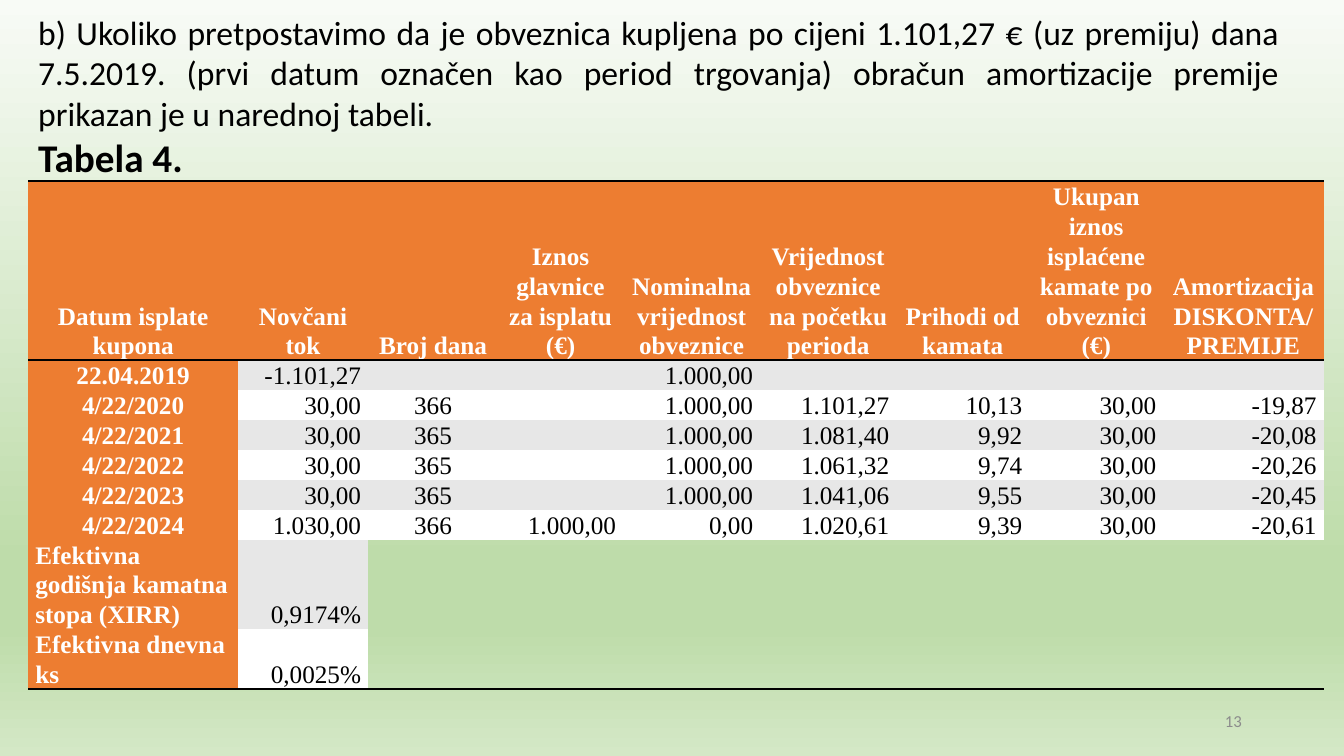
"""Builds the slide on amortising a bond premium."""
from lxml import etree
from pptx import Presentation
from pptx.dml.color import RGBColor
from pptx.enum import text as t
from pptx.oxml import ns
from pptx.util import Pt

ORANGE, GREY, WHITE, BLACK = "ED7D31", "E7E7E7", "FFFFFF", "000000"
SERIF = "Times New Roman"
LEFT, CENTER, RIGHT, JUSTIFY = (
    t.PP_ALIGN.LEFT, t.PP_ALIGN.CENTER, t.PP_ALIGN.RIGHT, t.PP_ALIGN.JUSTIFY)
NO_STYLE_NO_GRID = "{2D5ABB26-0587-4C30-8999-92F81FD0307C}"

BACKGROUND = [(0, "F8FBF6"), (74, "BEDCAA"), (83, "BEDCAA"), (100, "D4E8C6")]
INTRO = ("b) Ukoliko pretpostavimo da je obveznica kupljena po cijeni 1.101,27 € "
         "(uz premiju) dana 7.5.2019. (prvi datum označen kao period trgovanja) "
         "obračun amortizacije premije prikazan je u narednoj tabeli.")
HEADINGS = ["Datum isplate kupona", "Novčani tok", "Broj dana",
            "Iznos glavnice za isplatu (€)", "Nominalna vrijednost obveznice",
            "Vrijednost obveznice na početku perioda", "Prihodi od kamata",
            "Ukupan iznos isplaćene kamate po obveznici (€)",
            "Amortizacija DISKONTA/ PREMIJE"]
PAYMENTS = [
    ["22.04.2019", "-1.101,27", "", "", "1.000,00", "", "", "", ""],
    ["4/22/2020", "30,00", "366", "", "1.000,00", "1.101,27", "10,13", "30,00", "-19,87"],
    ["4/22/2021", "30,00", "365", "", "1.000,00", "1.081,40", "9,92", "30,00", "-20,08"],
    ["4/22/2022", "30,00", "365", "", "1.000,00", "1.061,32", "9,74", "30,00", "-20,26"],
    ["4/22/2023", "30,00", "365", "", "1.000,00", "1.041,06", "9,55", "30,00", "-20,45"],
    ["4/22/2024", "1.030,00", "366", "1.000,00", "0,00", "1.020,61", "9,39", "30,00",
     "-20,61"],
]
RATES = [["Efektivna godišnja kamatna stopa (XIRR)", "0,9174%"] + [""] * 7,
         ["Efektivna dnevna ks", "0,0025%"] + [""] * 7]
COLUMN_WIDTHS = [149.8, 92.9, 92.9, 89.3, 97.9, 97.2, 95, 95.8, 114.5]
LINES_PER_ROW = [6] + [1] * len(PAYMENTS) + [3, 2]
LINE_HEIGHT = 21.3


def color(hex_value):
    """Return the colour for a hex string."""
    return RGBColor.from_string(hex_value)


def write(paragraph, content, size=18, font=SERIF, ink=BLACK, bold=False,
          align=LEFT, spacing=None):
    """Write formatted text into a paragraph."""
    paragraph.alignment = align
    if spacing:
        paragraph.line_spacing = spacing
    if not content:
        etree.SubElement(paragraph._p, ns.qn("a:endParaRPr"), sz="1200")
        return
    run = paragraph.add_run()
    run.text = content
    run.font.size, run.font.name, run.font.bold = Pt(size), font, bold
    run.font.color.rgb = color(ink)


def add_text_frame(slide, left, top, width, height):
    """Add a wrapping text box and return its text frame."""
    frame = slide.shapes.add_textbox(Pt(left), Pt(top), Pt(width), Pt(height)).text_frame
    frame.word_wrap = True
    return frame


def paint_background(slide, stops):
    """Fill the slide with a gradient from top to bottom."""
    fill = slide.background.fill
    fill.gradient()
    fill.gradient_angle = 270
    stop_list = slide._element.find(".//" + ns.qn("a:gsLst"))
    for default_stop in list(stop_list):
        stop_list.remove(default_stop)
    for percent, shade in stops:
        stop = etree.SubElement(stop_list, ns.qn("a:gs"), pos=str(percent * 1000))
        etree.SubElement(stop, ns.qn("a:srgbClr"), val=shade)


def rule_cell(cell, sides):
    """Draw black rules on the given sides of a cell, top before bottom."""
    properties = cell._tc.get_or_add_tcPr()
    for index, side in enumerate(sides):
        rule = etree.Element(ns.qn("a:ln" + side), w=str(Pt(2)))
        fill = etree.SubElement(rule, ns.qn("a:solidFill"))
        etree.SubElement(fill, ns.qn("a:srgbClr"), val=BLACK)
        properties.insert(index, rule)


def fill_cell(cell, content, fill=None, anchor=t.MSO_ANCHOR.BOTTOM, sides="", **style):
    """Set the text, fill and rules of a table cell."""
    cell.margin_left = cell.margin_right = Pt(5)
    cell.margin_top = cell.margin_bottom = 0
    cell.vertical_anchor = anchor
    if fill:
        cell.fill.solid()
        cell.fill.fore_color.rgb = color(fill)
    else:
        cell.fill.background()
    rule_cell(cell, sides)
    write(cell.text_frame.paragraphs[0], content, spacing=1.07, **style)


def add_amortization_table(slide, left, top):
    """Add the table of payments and effective rates."""
    rows = [HEADINGS] + PAYMENTS + RATES
    table = slide.shapes.add_table(
        len(rows), len(HEADINGS), Pt(left), Pt(top), Pt(sum(COLUMN_WIDTHS)),
        Pt(sum(LINES_PER_ROW) * LINE_HEIGHT)).table
    table.horz_banding = False
    table._tbl.tblPr.find(ns.qn("a:tableStyleId")).text = NO_STYLE_NO_GRID
    for column, width in zip(table.columns, COLUMN_WIDTHS):
        column.width = Pt(width)
    for row, lines in zip(table.rows, LINES_PER_ROW):
        row.height = Pt(lines * LINE_HEIGHT)

    first_rate = 1 + len(PAYMENTS)
    for r, values in enumerate(rows):
        sides = "TB" if r == 0 else "B" if r == len(rows) - 1 else ""
        band = GREY if r % 2 else WHITE
        for c, value in enumerate(values):
            cell = table.cell(r, c)
            if r == 0 or c == 0:
                fill_cell(cell, value, ORANGE, sides=sides, ink=WHITE, bold=True,
                          align=LEFT if r >= first_rate else CENTER)
            else:
                fill_cell(cell, value, band if r < first_rate or c == 1 else None,
                          sides=sides, align=CENTER if c == 2 else RIGHT)


def main():
    """Build and save the slide."""
    deck = Presentation()
    deck.slide_width, deck.slide_height = Pt(960), Pt(540)
    slide = deck.slides.add_slide(deck.slide_layouts[6])
    paint_background(slide, BACKGROUND)
    add_amortization_table(slide, 20.2, 129.4)

    page = add_text_frame(slide, 678.2, 500.4, 216, 28.8)
    page.vertical_anchor = t.MSO_ANCHOR.MIDDLE
    write(page.paragraphs[0], "13", size=12, font="Calibri", ink="8C8C8C", align=RIGHT)

    intro = add_text_frame(slide, 20.2, 5, 900.7, 157.7)
    write(intro.paragraphs[0], INTRO, size=24, font="Calibri", align=JUSTIFY)
    write(intro.add_paragraph(), "Tabela 4.", size=28, font="Calibri", bold=True,
          align=JUSTIFY)
    deck.save("out.pptx")


if __name__ == "__main__":
    main()
